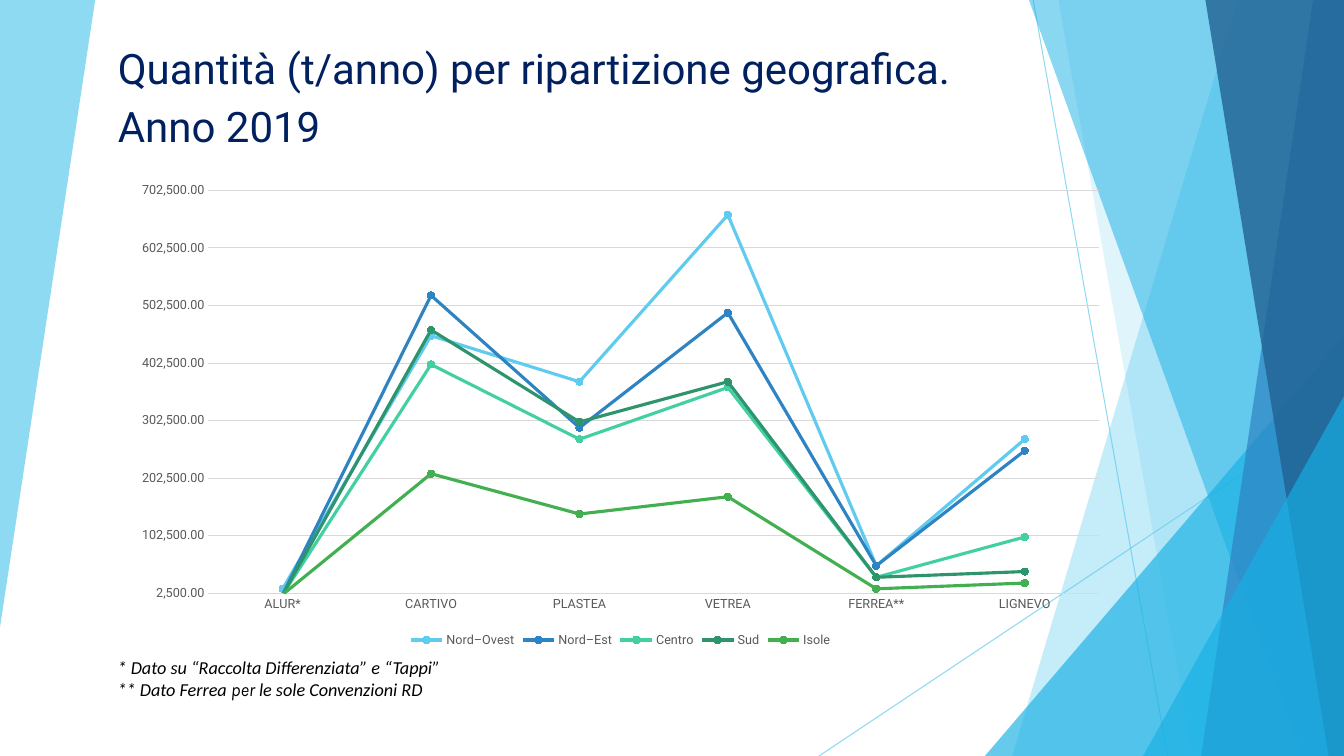
"""Build a slide with a line chart of yearly quantities by geographic area."""
from lxml import etree
from pptx import Presentation, util as u
from pptx.chart.data import CategoryChartData
from pptx.dml.color import RGBColor
from pptx.enum import chart as ch, shapes, text
from pptx.oxml.ns import qn

W, H = 960, 540
SKY, AQUA, BLUE, NAVY = "5FCBEF", "17B0E4", "2E83C3", "226292"
GREY, GRID = "595959", "D9D9D9"
CATEGORIES = ["ALUR*", "CARTIVO", "PLASTEA", "VETREA", "FERREA**", "LIGNEVO"]
SERIES = [
    ("Nord–Ovest", SKY, [10000, 450000, 370000, 660000, 50000, 270000]),
    ("Nord–Est", BLUE, [0, 520000, 290000, 490000, 50000, 250000]),
    ("Centro", "42D0A2", [0, 400000, 270000, 360000, 30000, 100000]),
    ("Sud", "2E946B", [0, 460000, 300000, 370000, 30000, 40000]),
    ("Isole", "42B051", [0, 210000, 140000, 170000, 10000, 20000]),
]


def rgb(color):
    return RGBColor.from_string(color)


def apply(obj, **values):
    for name, value in values.items():
        setattr(obj, name, value)


def set_font(font, color, **values):
    apply(font, **values)
    font.color.rgb = rgb(color)


def set_alpha(sp, percent):
    for clr in sp._element.spPr.iter(qn("a:srgbClr")):
        etree.SubElement(clr, qn("a:alpha"), val=str(percent * 1000))


class SlideBuilder:
    def __init__(self, prs):
        self.slide = prs.slides.add_slide(prs.slide_layouts[5])
        self.shapes = self.slide.shapes

    def box(self, *lengths):
        return [u.Pt(v) for v in lengths]

    def paint(self, sp, color, alpha):
        sp.shadow.inherit = False
        sp.fill.solid()
        sp.fill.fore_color.rgb = rgb(color)
        sp.line.fill.background()
        set_alpha(sp, alpha)

    def panel(self, points, color, alpha):
        fb = self.shapes.build_freeform(*points[0], scale=u.Pt(1))
        fb.add_line_segments(points[1:], close=True)
        self.paint(fb.convert_to_shape(), color, alpha)

    def right_panel(self, top_x, bottom_x, color, alpha):
        self.panel([(top_x, 0), (W, 0), (W, H), (bottom_x, H)], color, alpha)

    def corner(self, x, y, color, alpha):
        sp = self.shapes.add_shape(shapes.MSO_SHAPE.ISOSCELES_TRIANGLE, *self.box(x, y, W - x, H - y))
        sp.adjustments[0] = 1
        self.paint(sp, color, alpha)

    def line(self, x1, y1, x2, y2, color, alpha):
        cx = self.shapes.add_connector(shapes.MSO_CONNECTOR.STRAIGHT, *self.box(x1, y1, x2, y2))
        cx.line.width = u.Pt(0.75)
        cx.line.color.rgb = rgb(color)
        set_alpha(cx, alpha)
        etree.SubElement(cx._element.spPr, qn("a:effectLst"))

    def title(self, words, bounds):
        sp = self.shapes.title
        self.shapes._spTree.append(sp._element)
        apply(sp, **dict(zip(("left", "top", "width", "height"), self.box(*bounds))))
        tf = sp.text_frame
        tf.text = words
        apply(tf, auto_size=text.MSO_AUTO_SIZE.NONE, word_wrap=True, vertical_anchor=text.MSO_ANCHOR.BOTTOM)
        p = tf.paragraphs[0]
        apply(p, alignment=text.PP_ALIGN.LEFT, line_spacing=1.15, space_after=u.Pt(10))
        for r in p.runs:
            set_font(r.font, "002060", name="Roboto", size=u.Pt(30))

    def notes(self, lines, bounds):
        tf = self.shapes.add_textbox(*self.box(*bounds)).text_frame
        apply(tf, word_wrap=True, auto_size=text.MSO_AUTO_SIZE.SHAPE_TO_FIT_TEXT)
        for i, runs in enumerate(lines):
            p = tf.add_paragraph() if i else tf.paragraphs[0]
            p.alignment = text.PP_ALIGN.JUSTIFY
            for words, name in runs:
                r = p.add_run()
                r.text = words
                set_font(r.font, "000000", name=name, size=u.Pt(13), italic=True)

    def chart(self, categories, series, bounds):
        data = CategoryChartData(number_format="#,##0.00")
        data.categories = categories
        for name, _, values in series:
            data.add_series(name, values)
        chart = self.shapes.add_chart(ch.XL_CHART_TYPE.LINE_MARKERS, *self.box(*bounds), data).chart
        set_font(chart.font, "000000", name="Roboto", size=u.Pt(10))
        apply(chart, has_title=False, has_legend=True)
        apply(chart.legend, position=ch.XL_LEGEND_POSITION.BOTTOM, include_in_layout=False)
        chart.plots[0].vary_by_categories = False
        cat, val = chart.category_axis, chart.value_axis
        for part in (cat.tick_labels, val.tick_labels, chart.legend):
            set_font(part.font, GREY, name="Roboto", size=u.Pt(9))
        for axis in (cat, val):
            apply(axis, major_tick_mark=ch.XL_TICK_MARK.NONE, minor_tick_mark=ch.XL_TICK_MARK.NONE)
        apply(val, minimum_scale=2500, maximum_scale=702500, major_unit=100000, has_major_gridlines=True)
        apply(val.tick_labels, number_format="#,##0.00", number_format_is_linked=False)
        val.format.line.fill.background()
        for line in (cat.format.line, val.major_gridlines.format.line):
            line.width = u.Pt(0.75)
            line.color.rgb = rgb(GRID)
        for s, (_, color, _) in zip(chart.plots[0].series, series):
            s.smooth = False
            s.format.line.width = u.Pt(2.25)
            apply(s.marker, style=ch.XL_MARKER_STYLE.CIRCLE, size=5)
            s.marker.format.fill.solid()
            for target in (s.format.line.color, s.marker.format.fill.fore_color, s.marker.format.line.color):
                target.rgb = rgb(color)


def main():
    prs = Presentation()
    apply(prs, slide_width=u.Pt(W), slide_height=u.Pt(H))
    b = SlideBuilder(prs)
    b.panel([(0, 0), (68, 0), (0, 448)], SKY, 70)
    b.line(738, 0, 834, H, SKY, 70)
    b.line(W, 290, 585, H, SKY, 70)
    b.right_panel(884, 723, SKY, 36)
    b.right_panel(756, 852, SKY, 20)
    b.corner(703.5, 240, AQUA, 66)
    b.right_panel(735, 930, AQUA, 50)
    b.right_panel(938, 858, BLUE, 70)
    b.right_panel(861, 949, NAVY, 80)
    b.corner(816.5, 283, AQUA, 66)
    b.title("Quantità (t/anno) per ripartizione geografica. \vAnno 2019", (77, 36.5, 766, 75))
    b.notes([
        [("* Dato su “Raccolta Differenziata” e “Tappi”", "Calibri")],
        [("** Dato Ferrea ", "Calibri"), ("per ", "Karla"), ("le sole Convenzioni RD", "Calibri")],
    ], (77, 465.3, 731, 39))
    b.chart(CATEGORIES, SERIES, (87.2, 124, 712, 341.3))
    prs.save("out.pptx")


if __name__ == "__main__":
    main()
